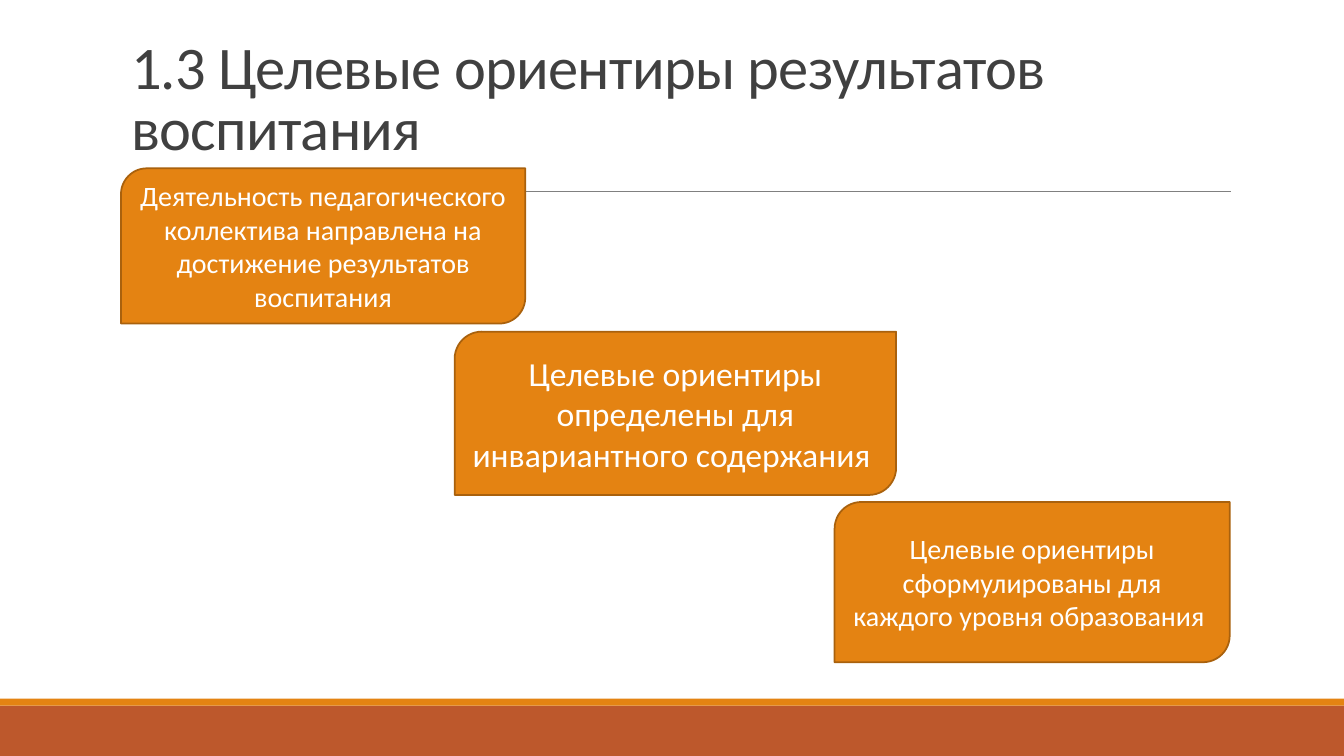
from dataclasses import dataclass

from lxml import etree
from pptx import Presentation
from pptx import util as u
from pptx.dml.color import RGBColor
from pptx.enum import shapes, text
from pptx.oxml import ns
from pptx.shapes.autoshape import Shape
from pptx.slide import Slide
from pptx.text.text import TextFrame

WIDTH, HEIGHT = u.Inches(13.33), u.Inches(7.5)
COLUMN, ROW = WIDTH / 100, HEIGHT / 100
FONT = "Calibri"
COLORS = {
    "accent": "E48312",
    "accent_edge": "A9610D",
    "footer": "BD582C",
    "rule": "808080",
    "title": "404040",
    "white": "FFFFFF",
}
TITLE = "1.3 Целевые ориентиры результатов воспитания"


@dataclass(frozen=True)
class Area:
    column: float
    row: float
    columns: float
    rows: float

    def lengths(self) -> tuple[int, int, int, int]:
        return (round(self.column * COLUMN), round(self.row * ROW),
                round(self.columns * COLUMN), round(self.rows * ROW))


@dataclass(frozen=True)
class Bar:
    area: Area
    color: str


@dataclass(frozen=True)
class Step:
    area: Area
    wording: str
    size: float


BARS = [
    Bar(Area(0, 93.33, 100, 6.67), "footer"),
    Bar(Area(0, 92.4, 100, 0.93), "accent"),
]
RULE = Area(9.83, 25.33, 81.77, 0)
TITLE_AREA = Area(9, 4.13, 82.5, 18.13)
STEPS = [
    Step(Area(9, 22.27, 30.08, 20.53),
         "Деятельность педагогического коллектива направлена на "
         "достижение результатов воспитания", 20),
    Step(Area(33.83, 43.87, 32.85, 21.6),
         "Целевые ориентиры определены для инвариантного содержания ", 24),
    Step(Area(62.1, 66.4, 29.4, 21.2),
         "Целевые ориентиры сформулированы для каждого уровня образования ", 20),
]


def color(name: str) -> RGBColor:
    return RGBColor.from_string(COLORS[name])


def write(frame: TextFrame, wording: str, size: float, color_name: str,
          alignment: text.PP_ALIGN, anchor: text.MSO_ANCHOR) -> None:
    frame.text = wording
    frame.word_wrap = True
    frame.auto_size = text.MSO_AUTO_SIZE.NONE
    frame.vertical_anchor = anchor
    paragraph = frame.paragraphs[0]
    paragraph.alignment = alignment
    font = paragraph.runs[0].font
    font.name = FONT
    font.size = u.Pt(size)
    font.color.rgb = color(color_name)


def add_filled(slide: Slide, kind: shapes.MSO_SHAPE, area: Area, fill: str) -> Shape:
    shape = slide.shapes.add_shape(kind, *area.lengths())
    shape.shadow.inherit = False
    shape.fill.solid()
    shape.fill.fore_color.rgb = color(fill)
    shape.line.fill.background()
    return shape


def add_bar(slide: Slide, bar: Bar) -> None:
    add_filled(slide, shapes.MSO_SHAPE.RECTANGLE, bar.area, bar.color)


def add_rule(slide: Slide, area: Area) -> None:
    left, top, width, height = area.lengths()
    rule = slide.shapes.add_connector(
        shapes.MSO_CONNECTOR.STRAIGHT, left, top, left + width, top + height)
    rule.line.color.rgb = color("rule")
    rule.line.width = u.Pt(0.5)
    etree.SubElement(rule._element.spPr, ns.qn("a:effectLst"))


def add_title(slide: Slide, area: Area) -> None:
    title = slide.shapes.title
    title.left, title.top, title.width, title.height = area.lengths()
    write(title.text_frame, TITLE, 43.2, "title",
          text.PP_ALIGN.LEFT, text.MSO_ANCHOR.BOTTOM)
    paragraph = title.text_frame.paragraphs[0]
    paragraph.line_spacing = 0.85
    paragraph.runs[0].font._element.set("spc", "-50")


def add_step(slide: Slide, step: Step) -> None:
    shape = add_filled(
        slide, shapes.MSO_SHAPE.ROUND_2_DIAG_RECTANGLE, step.area, "accent")
    shape.line.color.rgb = color("accent_edge")
    shape.line.width = u.Pt(1.25)
    write(shape.text_frame, step.wording, step.size, "white",
          text.PP_ALIGN.CENTER, text.MSO_ANCHOR.MIDDLE)


def main() -> None:
    presentation = Presentation()
    presentation.slide_width, presentation.slide_height = WIDTH, HEIGHT
    slide = presentation.slides.add_slide(
        presentation.slide_layouts.get_by_name("Title Only"))
    for bar in BARS:
        add_bar(slide, bar)
    add_rule(slide, RULE)
    add_title(slide, TITLE_AREA)
    for step in STEPS:
        add_step(slide, step)
    presentation.save("out.pptx")


if __name__ == "__main__":
    main()
